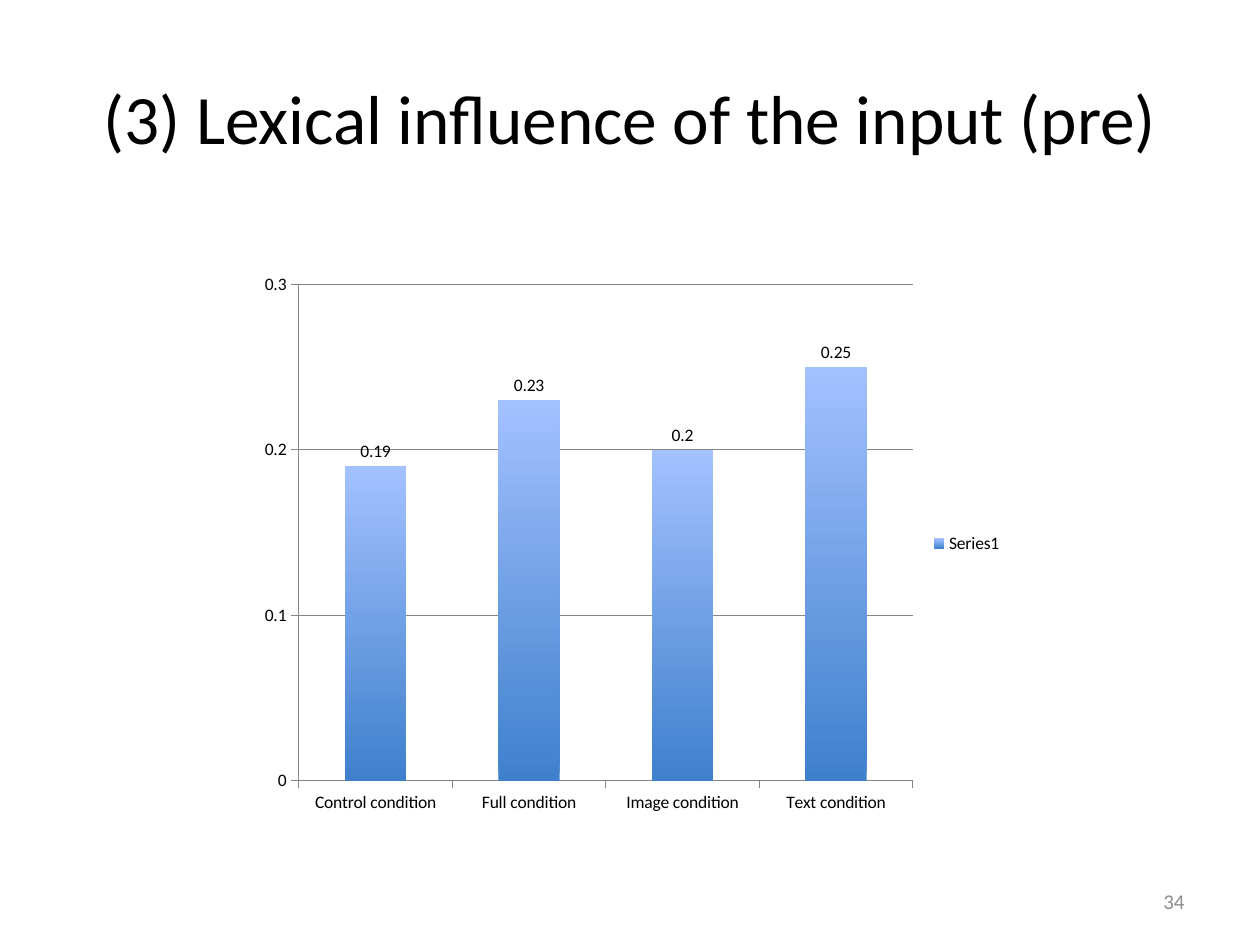
from pptx import Presentation
from pptx.chart.data import CategoryChartData
from pptx.dml.color import RGBColor
from pptx.enum.chart import XL_CHART_TYPE, XL_LABEL_POSITION, XL_LEGEND_POSITION, XL_TICK_MARK
from pptx.enum.text import MSO_ANCHOR, PP_ALIGN
from pptx.util import Cm, Pt

BLACK = RGBColor(0x00, 0x00, 0x00)
PAGE_GRAY = RGBColor(0x8C, 0x8C, 0x8C)
AXIS_GRAY = RGBColor(0x86, 0x86, 0x86)
BAR_BOTTOM = RGBColor(0x3F, 0x80, 0xCD)
BAR_TOP = RGBColor(0xA3, 0xC1, 0xFF)
FONT = "Calibri"
CENTER, RIGHT = PP_ALIGN.CENTER, PP_ALIGN.RIGHT
MIDDLE = MSO_ANCHOR.MIDDLE
COLUMNS = XL_CHART_TYPE.COLUMN_CLUSTERED
LEGEND_RIGHT = XL_LEGEND_POSITION.RIGHT
LABEL_ABOVE = XL_LABEL_POSITION.OUTSIDE_END
TICK_OUTSIDE = XL_TICK_MARK.OUTSIDE
TITLE_ONLY = 5

SCORES = {
    "Control condition": 0.19,
    "Full condition": 0.23,
    "Image condition": 0.2,
    "Text condition": 0.25,
}


def style_font(font, size, color):
    """Apply the deck typeface with a size and colour."""
    font.name = FONT
    font.size = Pt(size)
    font.color.rgb = color


def write_line(box, text, size, color, alignment):
    """Fill a box with one vertically centred line of text."""
    frame = box.text_frame
    frame.text = text
    frame.word_wrap = True
    frame.vertical_anchor = MIDDLE
    para = frame.paragraphs[0]
    para.alignment = alignment
    style_font(para.runs[0].font, size, color)


def add_title(page, text):
    """Place and format the title placeholder."""
    title = page.shapes.title
    title.left, title.top, title.width, title.height = Cm(1.27), Cm(0.76), Cm(22.86), Cm(3.18)
    write_line(title, text, 39.6, BLACK, CENTER)


def add_page_number(page, number):
    """Add the page number at the lower right."""
    box = page.shapes.add_textbox(Cm(18.21), Cm(17.65), Cm(5.92), Cm(1.02))
    write_line(box, number, 12, PAGE_GRAY, RIGHT)


def style_axis(axis):
    """Give an axis outside ticks and a thin gray line."""
    axis.major_tick_mark = TICK_OUTSIDE
    axis.format.line.color.rgb = AXIS_GRAY
    axis.format.line.width = Pt(0.75)


def fill_bars(series):
    """Shade the bars from dark at the bottom to light at the top."""
    fill = series.format.fill
    fill.gradient()
    fill.gradient_angle = 90
    for stop, color in zip(fill.gradient_stops, (BAR_BOTTOM, BAR_TOP)):
        stop.color.rgb = color
    series.format.line.fill.background()


def add_score_chart(page):
    """Add the column chart of scores per condition."""
    chart_data = CategoryChartData()
    chart_data.categories = list(SCORES)
    chart_data.add_series("Series1", list(SCORES.values()))
    frame = page.shapes.add_chart(COLUMNS, Cm(5.03), Cm(5.31), Cm(15.44), Cm(11.3), chart_data)
    chart = frame.chart
    style_font(chart.font, 10, BLACK)
    chart.has_title = False
    chart.has_legend = True
    chart.legend.position = LEGEND_RIGHT
    chart.legend.include_in_layout = False

    for axis in (chart.category_axis, chart.value_axis):
        style_axis(axis)
    scale = chart.value_axis
    scale.minimum_scale, scale.maximum_scale, scale.major_unit = 0, 0.3, 0.1
    scale.has_major_gridlines = True
    scale.major_gridlines.format.line.color.rgb = AXIS_GRAY
    scale.major_gridlines.format.line.width = Pt(0.75)

    plot = chart.plots[0]
    plot.gap_width = 150
    plot.vary_by_categories = False
    plot.has_data_labels = True
    plot.data_labels.show_value = True
    plot.data_labels.position = LABEL_ABOVE
    fill_bars(plot.series[0])


def main():
    """Build and save the slide."""
    deck = Presentation()
    deck.slide_width, deck.slide_height = Cm(25.4), Cm(19.05)
    page = deck.slides.add_slide(deck.slide_layouts[TITLE_ONLY])
    add_title(page, "(3) Lexical influence of the input (pre)")
    add_page_number(page, "34")
    add_score_chart(page)
    deck.save("out.pptx")


if __name__ == "__main__":
    main()
